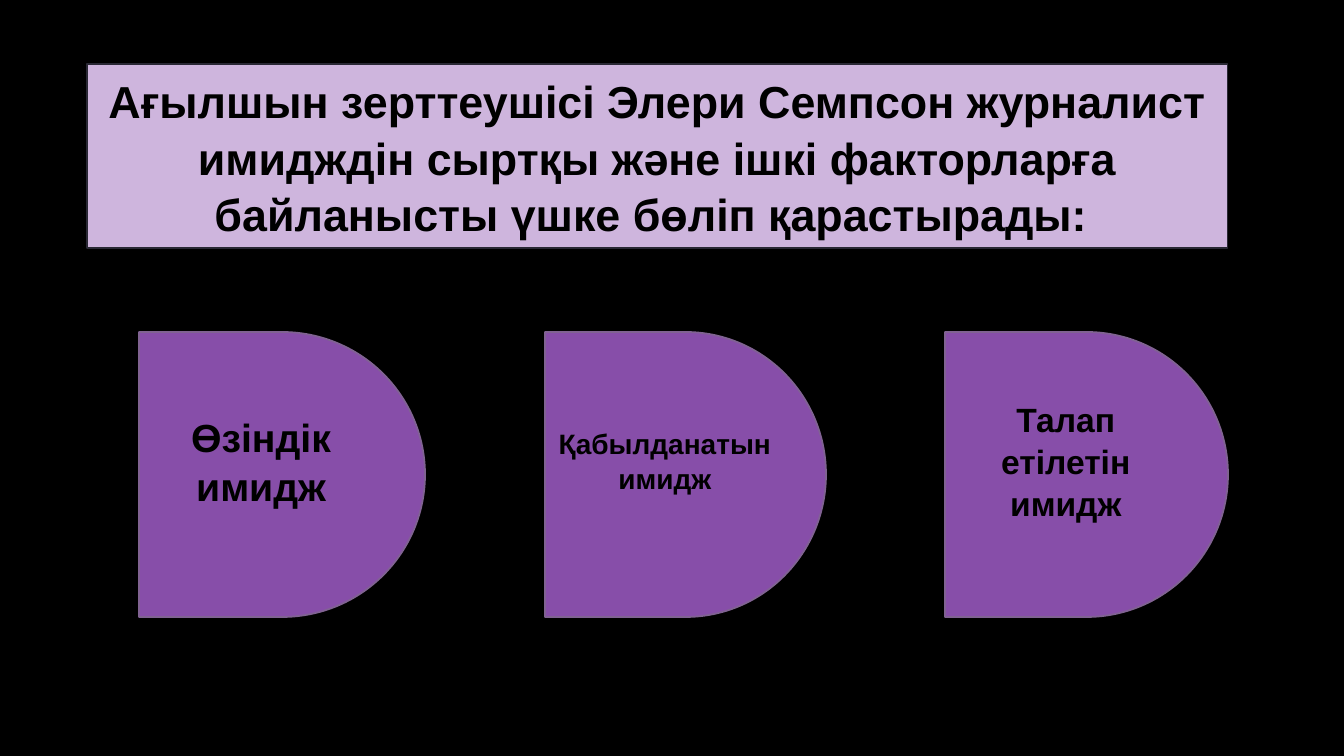
from pptx import Presentation
from pptx.dml.color import RGBColor
from pptx.enum.shapes import MSO_SHAPE as Shape
from pptx.enum.text import MSO_ANCHOR as Anchor, MSO_AUTO_SIZE as AutoSize, PP_ALIGN as Align
from pptx.util import Emu, Pt

TITLE = ("Ағылшын зерттеушісі Элери Семпсон журналист имидждін сыртқы "
         "және ішкі факторларға байланысты үшке бөліп қарастырады: ")
TYPES = [
    ("Өзіндік имидж", 139, 286, 28),
    ("Қабылданатын имидж", 545, 281, 20),
    ("Талап етілетін имидж", 945, 283, 24),
]
TYPE_TOP, TYPE_HEIGHT = 332, 285
TEXT_LIFT = 34

BLACK = RGBColor(0x00, 0x00, 0x00)
LILAC = RGBColor(0xCE, 0xB5, 0xDD)
PURPLE = RGBColor(0x87, 0x4E, 0xA9)
TITLE_EDGE = RGBColor(0x29, 0x28, 0x34)
TYPE_EDGE = RGBColor(0x80, 0x62, 0x92)


def px(n):
    return Emu(round(n * 914400 / 100.8))


def style(s, fill, edge, width):
    s.fill.solid()
    s.fill.fore_color.rgb = fill
    s.line.color.rgb = edge
    s.line.width = Pt(width)


def write(s, text, size):
    tf = s.text_frame
    tf.word_wrap = True
    tf.auto_size = AutoSize.NONE
    tf.vertical_anchor = Anchor.MIDDLE
    p = tf.paragraphs[0]
    p.alignment = Align.CENTER
    p.line_spacing = 1.05
    r = p.add_run()
    r.text = text
    r.font.name = "Arial"
    r.font.size = Pt(size)
    r.font.bold = True
    r.font.color.rgb = BLACK


def main():
    """Build the slide on the three kinds of a journalist's image."""
    prs = Presentation()
    prs.slide_width, prs.slide_height = px(1344), px(756)
    slide = prs.slides.add_slide(prs.slide_layouts[5])
    slide.background.fill.solid()
    slide.background.fill.fore_color.rgb = BLACK

    title = slide.shapes.title
    title.left, title.top, title.width, title.height = map(px, (87, 64, 1141, 184))
    style(title, LILAC, TITLE_EDGE, 0.75)
    write(title, TITLE, 32)

    for text, left, width, size in TYPES:
        s = slide.shapes.add_shape(Shape.FLOWCHART_DELAY, px(left), px(TYPE_TOP),
                                   px(width), px(TYPE_HEIGHT))
        s.shadow.inherit = False
        style(s, PURPLE, TYPE_EDGE, 1.25)
        write(s, text, size)
        s.text_frame.margin_bottom = px(TEXT_LIFT)

    prs.save("out.pptx")


if __name__ == "__main__":
    main()
